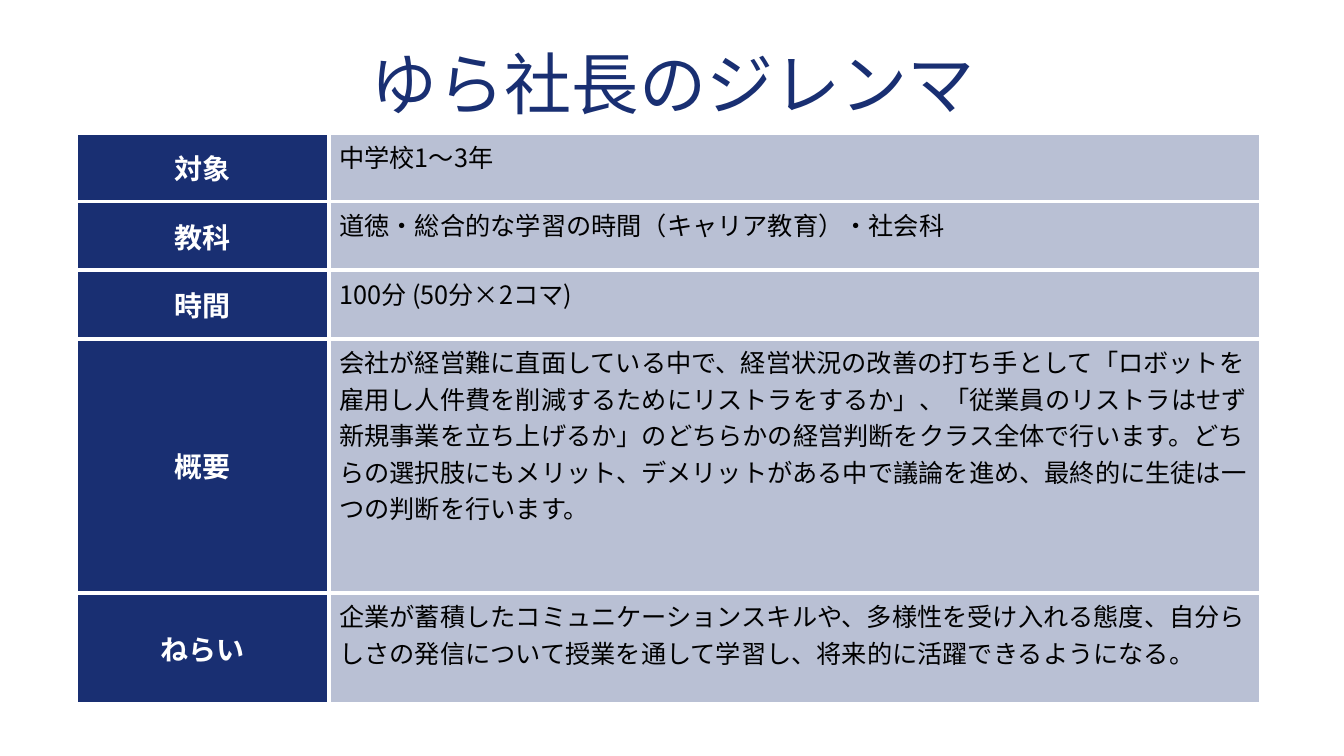
from dataclasses import dataclass

from lxml.etree import SubElement
from pptx import Presentation
from pptx.dml.color import RGBColor
from pptx.enum.text import MSO_ANCHOR as Anchor, PP_ALIGN as Align
from pptx.oxml.ns import qn
from pptx.table import _Cell as Cell
from pptx.text.text import TextFrame
from pptx.util import Inches, Pt

NAVY = RGBColor(0x19, 0x2F, 0x72)
WHITE = RGBColor(0xFF, 0xFF, 0xFF)
BLACK = RGBColor(0x00, 0x00, 0x00)
FONT = "Noto Sans CJK JP"
WIDE, HIGH = Inches(13.33), Inches(7.5)
COLS = (0.188, 0.693)  # shares of the slide width
ROW = 0.0907  # share of the slide height


@dataclass
class Entry:
    label: str
    body: str
    share: float = ROW


ENTRIES = [
    Entry("対象", "中学校1〜3年"),
    Entry("教科", "道徳・総合的な学習の時間（キャリア教育）・社会科"),
    Entry("時間", "100分 (50分×2コマ)"),
    Entry(
        "概要",
        "会社が経営難に直面している中で、経営状況の改善の打ち手として"
        "「ロボットを雇用し人件費を削減するためにリストラをするか」、"
        "「従業員のリストラはせず新規事業を立ち上げるか」のどちらかの"
        "経営判断をクラス全体で行います。どちらの選択肢にもメリット、"
        "デメリットがある中で議論を進め、最終的に生徒は一つの判断を行います。",
        0.336,
    ),
    Entry(
        "ねらい",
        "企業が蓄積したコミュニケーションスキルや、多様性を受け入れる態度、"
        "自分らしさの発信について授業を通して学習し、"
        "将来的に活躍できるようになる。",
        0.147,
    ),
]


def across(share: float) -> int:
    return round(WIDE * share)


def down(share: float) -> int:
    return round(HIGH * share)


def write(frame: TextFrame, text: str, *, size: int, color: RGBColor,
          bold: bool = False, align: Align = Align.LEFT,
          space: float = 1.0) -> None:
    para = frame.paragraphs[0]
    para.alignment = align
    para.line_spacing = space
    run = para.add_run()
    run.text = text
    font = run.font
    font.size, font.bold, font.name = Pt(size), bold, FONT
    font.color.rgb = color
    SubElement(run._r.get_or_add_rPr(), qn("a:ea"), typeface=FONT)


def paint(cell: Cell, alpha: int = 100) -> None:
    """Give a cell white borders and a navy fill of the given opacity."""
    props = cell._tc.get_or_add_tcPr()
    for side in "LRTB":
        line = SubElement(props, qn(f"a:ln{side}"), w=str(Pt(3)))
        fill = SubElement(line, qn("a:solidFill"))
        SubElement(fill, qn("a:srgbClr"), val=str(WHITE))
    cell.fill.solid()
    cell.fill.fore_color.rgb = NAVY
    if alpha < 100:
        tone = props.find(qn("a:solidFill")).find(qn("a:srgbClr"))
        SubElement(tone, qn("a:alpha"), val=str(alpha * 1000))


def main() -> None:
    deck = Presentation()
    deck.slide_width, deck.slide_height = WIDE, HIGH
    slide = deck.slides.add_slide(deck.slide_layouts[6])

    title = slide.shapes.add_textbox(
        across(0.0315), down(0.068), across(0.938), down(0.061)).text_frame
    title.word_wrap = True
    title.margin_top = title.margin_bottom = 0
    write(title, "ゆら社長のジレンマ", size=48, color=NAVY,
          align=Align.CENTER, space=0.9)

    table = slide.shapes.add_table(
        len(ENTRIES), len(COLS), across(0.057), down(0.176),
        across(sum(COLS)), down(sum(e.share for e in ENTRIES))).table
    for col, share in zip(table.columns, COLS):
        col.width = across(share)
    for row, entry in zip(table.rows, ENTRIES):
        row.height = down(entry.share)
        label, body = row.cells
        paint(label)
        label.vertical_anchor = Anchor.MIDDLE
        write(label.text_frame, entry.label, size=20, color=WHITE,
              bold=True, align=Align.CENTER)
        paint(body, alpha=30)
        write(body.text_frame, entry.body, size=18, color=BLACK)

    deck.save("out.pptx")


if __name__ == "__main__":
    main()
